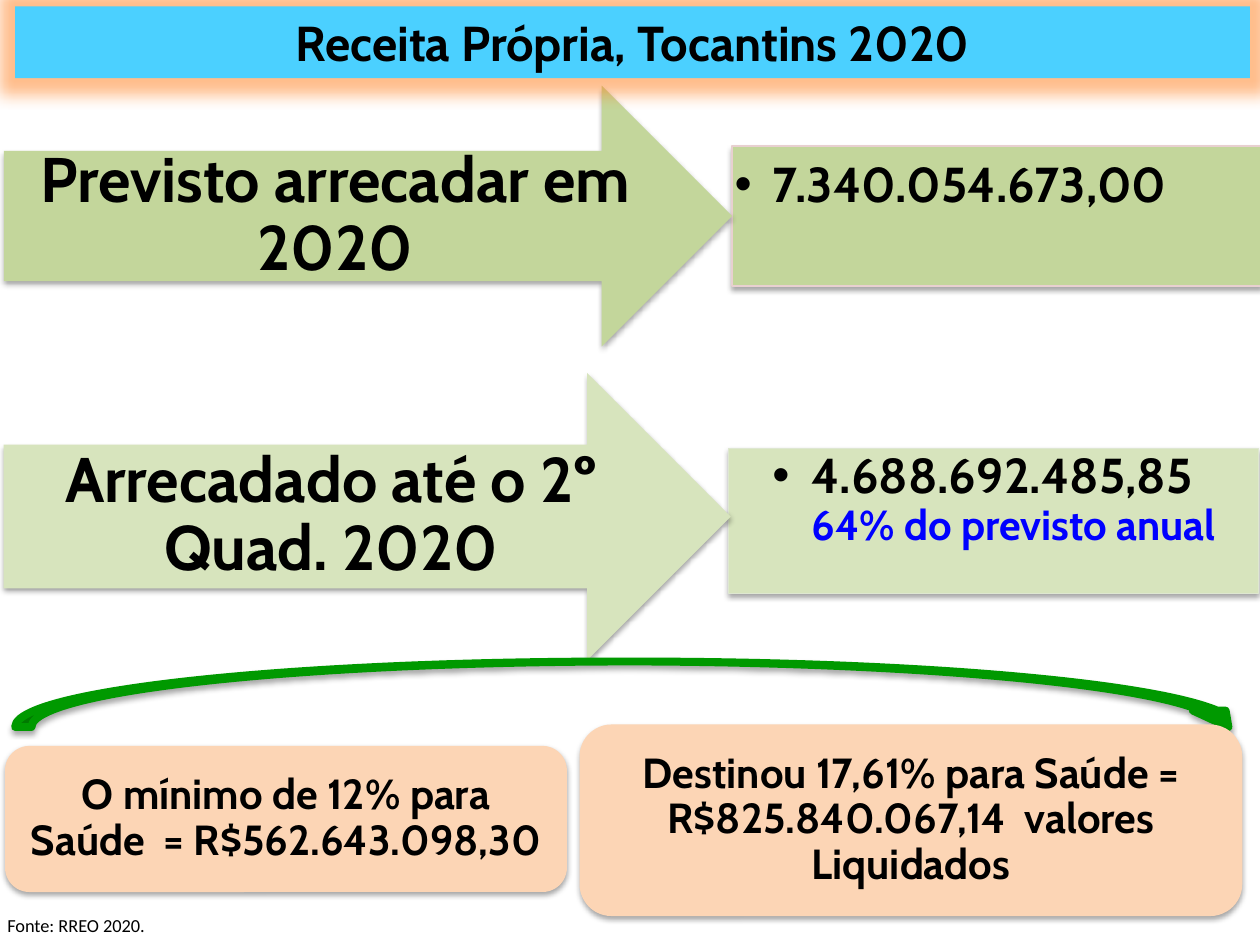
from lxml import etree
from pptx import Presentation
from pptx.dml.color import RGBColor as Rgb
from pptx.enum.shapes import MSO_SHAPE as Kind
from pptx.enum.text import MSO_ANCHOR as Anchor, MSO_AUTO_SIZE as Auto, PP_ALIGN as Align
from pptx.oxml import parse_xml
from pptx.oxml.ns import nsdecls, qn
from pptx.util import Inches, Pt

HUES = {
    "ink": "000000", "blue": "0000FF", "sky": "4BD0FF", "glow": "FF7D1A",
    "leaf": "C3D69B", "mint": "D7E4BD", "rose": "E8D0D0", "pale": "DEE7D1",
    "green": "009900", "peach": "FCD5B5",
}


def hue(name):
    return Rgb.from_string(HUES[name])


def write(para, text, size=28, font="Cabin", bold=True, color="ink", align=None, space=None):
    run = para.add_run()
    run.text = text
    run.font.size = Pt(size)
    run.font.name = font
    run.font.bold = bold
    run.font.color.rgb = hue(color)
    if align is not None:
        para.alignment = align
    if space:
        para.line_spacing = space


class Deck:
    def __init__(self, layout):
        self.show = Presentation()
        self.show.slide_width, self.show.slide_height = Inches(10), Inches(7.5)
        self.slide = self.show.slides.add_slide(self.show.slide_layouts[layout])
        self.items = self.slide.shapes

    def place(self, shape, box):
        shape.left, shape.top, shape.width, shape.height = map(Inches, box)

    def frame(self, shape, pads, anchor):
        frame = shape.text_frame
        frame.word_wrap = True
        frame.auto_size = Auto.NONE
        frame.vertical_anchor = anchor
        (frame.margin_left, frame.margin_top,
         frame.margin_right, frame.margin_bottom) = map(Inches, pads)
        return frame.paragraphs[0]

    def paint(self, shape, fill, line=None, width=0.75):
        shape.fill.solid()
        shape.fill.fore_color.rgb = hue(fill)
        if line:
            shape.line.color.rgb = hue(line)
            shape.line.width = Pt(width)
        else:
            shape.line.fill.background()

    def effect(self, shape, tag, color, alpha, **attrs):
        shape.shadow.inherit = False
        group = shape._element.spPr.find(qn("a:effectLst"))
        node = etree.SubElement(group, qn(tag), {key: str(val) for key, val in attrs.items()})
        node.append(parse_xml(
            f'<a:srgbClr {nsdecls("a")} val="{HUES[color]}">'
            f'<a:alpha val="{alpha * 1000}"/></a:srgbClr>'))

    def shade(self, shape):
        self.effect(shape, "a:outerShdw", "ink", 35, blurRad=Pt(3.1), dist=Pt(1.8),
                    dir=5400000, rotWithShape=0)

    def title(self, text, box):
        shape = self.items.title
        self.place(shape, box)
        self.paint(shape, "sky")
        self.effect(shape, "a:glow", "glow", 50, rad=Pt(18))
        para = self.frame(shape, (0.1, 0.05, 0.1, 0.05), Anchor.MIDDLE)
        write(para, text, align=Align.CENTER)
        shape._element.getparent().append(shape._element)

    def value(self, slot, text, box, fill, line, left, top, note=None):
        shape = self.slide.placeholders[slot]
        self.place(shape, box)
        self.paint(shape, fill, line)
        self.shade(shape)
        para = self.frame(shape, (0.02, top, 0.02, 0.02), Anchor.TOP)
        props = para._p.get_or_add_pPr()
        props.set("marL", str(Inches(left)))
        props.set("indent", str(Inches(-0.31)))
        para.space_before = Pt(0)
        write(para, text, align=Align.LEFT, space=0.9)
        if note:
            para.add_line_break()
            write(para, note, size=24, color="blue")

    def block(self, kind, box, fill, text=None, size=24, pads=(0.1,) * 4, line=None, width=0.75):
        shape = self.items.add_shape(kind, *map(Inches, box))
        self.paint(shape, fill, line, width)
        self.shade(shape)
        if text:
            para = self.frame(shape, pads, Anchor.MIDDLE)
            write(para, text, size=size, align=Align.CENTER, space=0.9)

    def arrow(self, text, box, fill):
        self.block(Kind.RIGHT_ARROW, box, fill, text, size=36, pads=(0.15, 0.07, 0.15, 0.07))

    def note(self, text, box):
        shape = self.items.add_textbox(*map(Inches, box))
        para = self.frame(shape, (0.1, 0.05, 0.1, 0.05), Anchor.TOP)
        write(para, text, size=10.5, font="Calibri", bold=False)


def main():
    deck = Deck(layout=3)
    deck.value(1, "7.340.054.673,00", (5.81, 1.16, 4.2, 1.11), "leaf", "rose", 0.3, 0.11)
    deck.value(2, "4.688.692.485,85", (5.78, 3.56, 4.21, 1.15), "mint", "pale", 0.64, 0.02,
               note="64% do previsto anual")
    deck.arrow("Previsto arrecadar em 2020", (0.03, 0.68, 5.78, 2.07), "leaf")
    deck.arrow("Arrecadado até o 2º Quad. 2020", (0.03, 2.96, 5.77, 2.28), "mint")
    deck.block(Kind.CURVED_DOWN_ARROW, (0.12, 5.25, 9.76, 0.52), "green", line="green", width=4.5)
    deck.block(Kind.ROUNDED_RECTANGLE, (0.04, 5.92, 4.46, 1.16), "peach",
               "O mínimo de 12% para Saúde  = R$562.643.098,30")
    deck.block(Kind.ROUNDED_RECTANGLE, (4.6, 5.75, 5.26, 1.52), "peach",
               "Destinou 17,61% para Saúde = R$825.840.067,14  valores Liquidados")
    deck.note("Fonte: RREO 2020.", (-0.04, 7.21, 4.57, 0.29))
    deck.title("Receita Própria, Tocantins 2020", (0.12, 0.05, 9.8, 0.57))
    deck.show.save("out.pptx")


if __name__ == "__main__":
    main()
